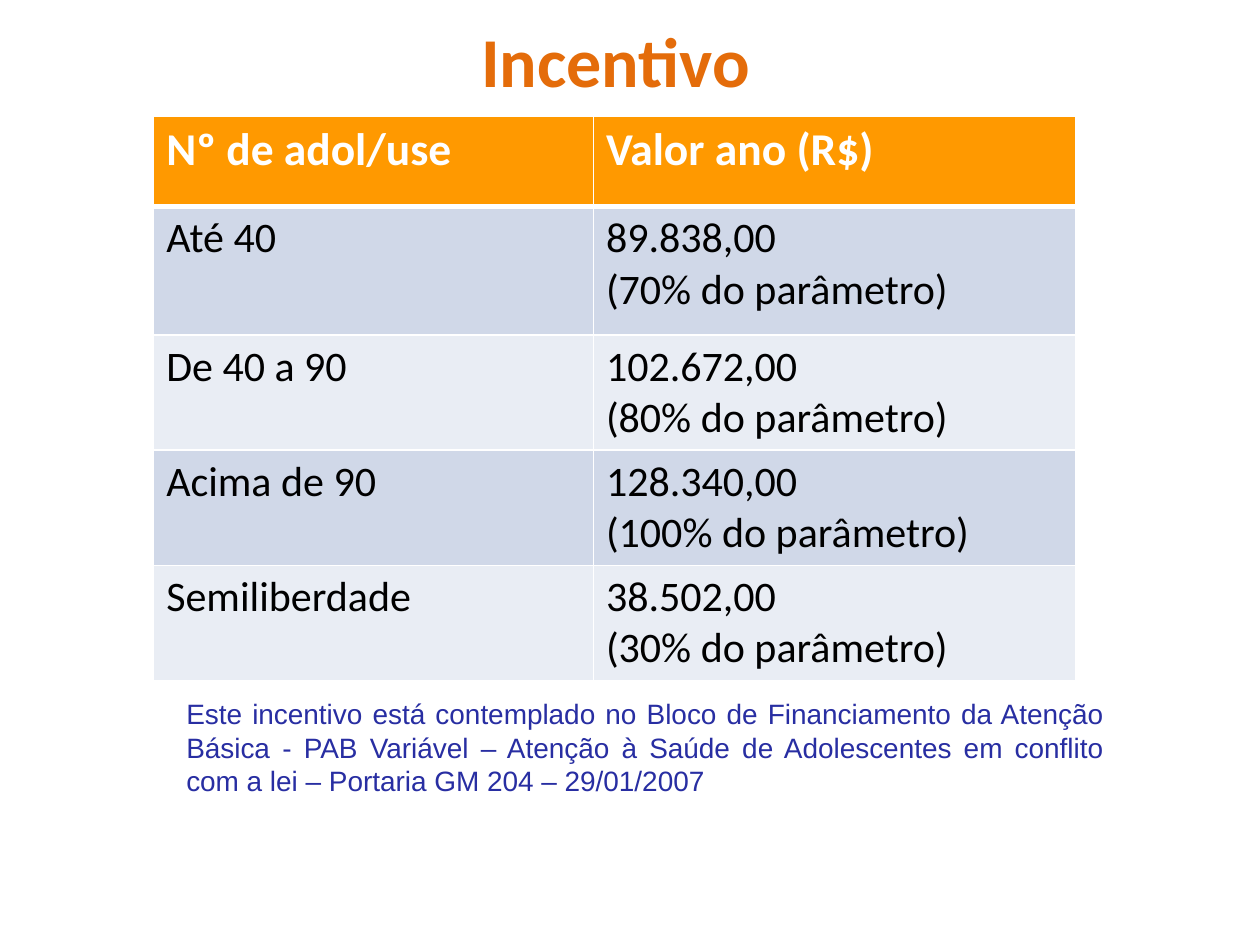
"""Build the slide on the yearly incentive by number of adolescents."""
from dataclasses import dataclass

from lxml import etree
from pptx import Presentation
from pptx.dml.color import RGBColor
from pptx.enum.text import MSO_ANCHOR, PP_ALIGN
from pptx.oxml.ns import qn
from pptx.slide import Slide
from pptx.table import _Cell
from pptx.text.text import _Paragraph
from pptx.util import Inches, Pt

CENTER, JUSTIFY = PP_ALIGN.CENTER, PP_ALIGN.JUSTIFY
MIDDLE = MSO_ANCHOR.MIDDLE
TITLE_ONLY = 5


@dataclass(frozen=True)
class Theme:
    """Colours, fonts and sizes in points."""
    title: str = "E46C0A"
    header: str = "FF9900"
    bands: tuple[str, str] = ("D0D8E8", "E9EDF4")
    white: str = "FFFFFF"
    body: str = "000000"
    note: str = "282EA2"
    main_font: str = "Calibri"
    note_font: str = "Arial"
    title_size: float = 40
    header_size: float = 26
    body_size: float = 24
    note_size: float = 16
    thin: float = 0.96
    thick: float = 3


@dataclass(frozen=True)
class Row:
    """One table row."""
    group: str
    value: str
    height: float


@dataclass(frozen=True)
class Box:
    """A place on the slide in inches."""
    left: float
    top: float
    width: float
    height: float

    def lengths(self) -> tuple[Inches, ...]:
        """Return left, top, width and height as lengths."""
        return tuple(Inches(v) for v in (self.left, self.top, self.width, self.height))


THEME = Theme()
TITLE_BOX = Box(0.2, 0, 9.37, 0.95)
NOTE_BOX = Box(1.38, 5.48, 7.48, 1.21)
TABLE_LEFT, TABLE_TOP = 1.22, 0.92
COLUMNS = (3.49, 3.83)
ROWS = (
    Row("Nº de adol/use", "Valor ano (R$)", 0.72),
    Row("Até 40", "89.838,00\n(70% do parâmetro)", 1.02),
    Row("De 40 a 90", "102.672,00\n(80% do parâmetro)", 0.91),
    Row("Acima de 90", "128.340,00\n(100% do parâmetro)", 0.91),
    Row("Semiliberdade", "38.502,00\n(30% do parâmetro)", 0.91),
)
NOTE = ("Este incentivo está contemplado no Bloco de Financiamento da Atenção "
        "Básica - PAB Variável – Atenção à Saúde de Adolescentes em conflito "
        "com a lei – Portaria GM 204 – 29/01/2007")


def style(p: _Paragraph, font: str, size: float, color: str, bold: bool = False) -> None:
    """Set the font of a paragraph."""
    p.font.name, p.font.size, p.font.bold = font, Pt(size), bold
    p.font.color.rgb = RGBColor.from_string(color)


def set_borders(cell: _Cell, top: float, bottom: float) -> None:
    """Draw white borders of the given widths around a cell."""
    tc_pr = cell._tc.get_or_add_tcPr()
    widths = {"a:lnL": THEME.thin, "a:lnR": THEME.thin, "a:lnT": top, "a:lnB": bottom}
    for i, (tag, width) in enumerate(widths.items()):
        ln = etree.Element(qn(tag), w=str(Pt(width)))
        fill = etree.SubElement(ln, qn("a:solidFill"))
        etree.SubElement(fill, qn("a:srgbClr"), val=THEME.white)
        tc_pr.insert(i, ln)


def fill_cell(cell: _Cell, text: str, row: int) -> None:
    """Write and format one table cell."""
    header = row == 0
    color = THEME.header if header else THEME.bands[(row - 1) % 2]
    cell.fill.solid()
    cell.fill.fore_color.rgb = RGBColor.from_string(color)
    cell.text = text
    for p in cell.text_frame.paragraphs:
        if header:
            style(p, THEME.main_font, THEME.header_size, THEME.white, True)
        else:
            style(p, THEME.main_font, THEME.body_size, THEME.body)
    set_borders(cell, THEME.thick if row == 1 else THEME.thin,
                THEME.thick if header else THEME.thin)


def add_title(slide: Slide) -> None:
    """Place and format the title."""
    sp = slide.shapes.title
    sp.left, sp.top, sp.width, sp.height = TITLE_BOX.lengths()
    tf = sp.text_frame
    tf.text = "Incentivo"
    tf.vertical_anchor = MIDDLE
    p = tf.paragraphs[0]
    p.alignment = CENTER
    style(p, THEME.main_font, THEME.title_size, THEME.title, True)


def add_values(slide: Slide) -> None:
    """Add the table of yearly values."""
    box = Box(TABLE_LEFT, TABLE_TOP, sum(COLUMNS), sum(r.height for r in ROWS))
    table = slide.shapes.add_table(len(ROWS), len(COLUMNS), *box.lengths()).table
    for column, width in zip(table.columns, COLUMNS):
        column.width = Inches(width)
    for i, row in enumerate(ROWS):
        table.rows[i].height = Inches(row.height)
        for j, text in enumerate((row.group, row.value)):
            fill_cell(table.cell(i, j), text, i)


def add_note(slide: Slide) -> None:
    """Add the note below the table."""
    tf = slide.shapes.add_textbox(*NOTE_BOX.lengths()).text_frame
    tf.word_wrap = True
    tf.text = NOTE
    p = tf.paragraphs[0]
    p.alignment = JUSTIFY
    style(p, THEME.note_font, THEME.note_size, THEME.note)


def main() -> None:
    """Build and save the presentation."""
    prs = Presentation()
    prs.slide_width, prs.slide_height = Inches(10), Inches(7.5)
    slide = prs.slides.add_slide(prs.slide_layouts[TITLE_ONLY])
    add_title(slide)
    add_values(slide)
    add_note(slide)
    prs.save("out.pptx")


if __name__ == "__main__":
    main()
